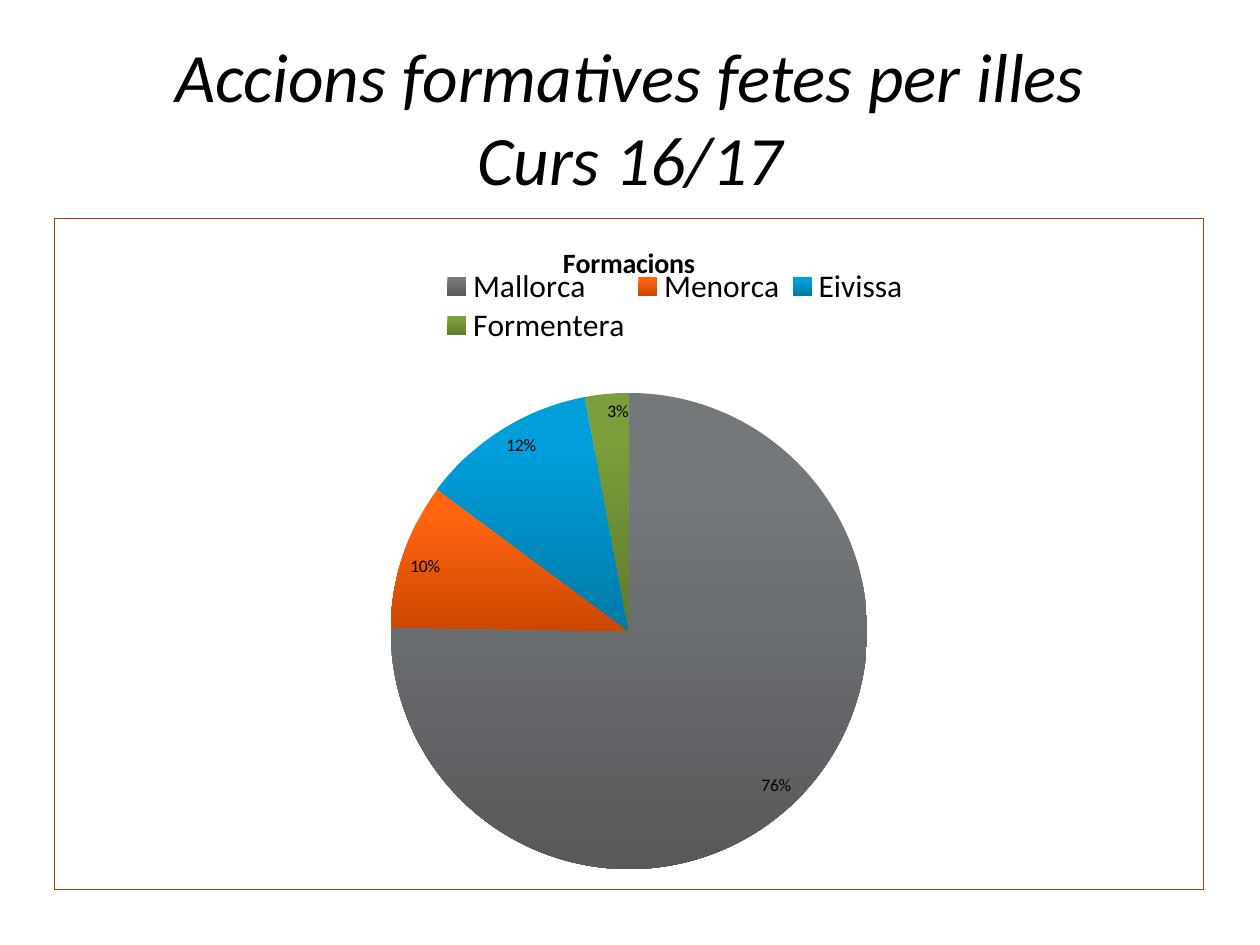
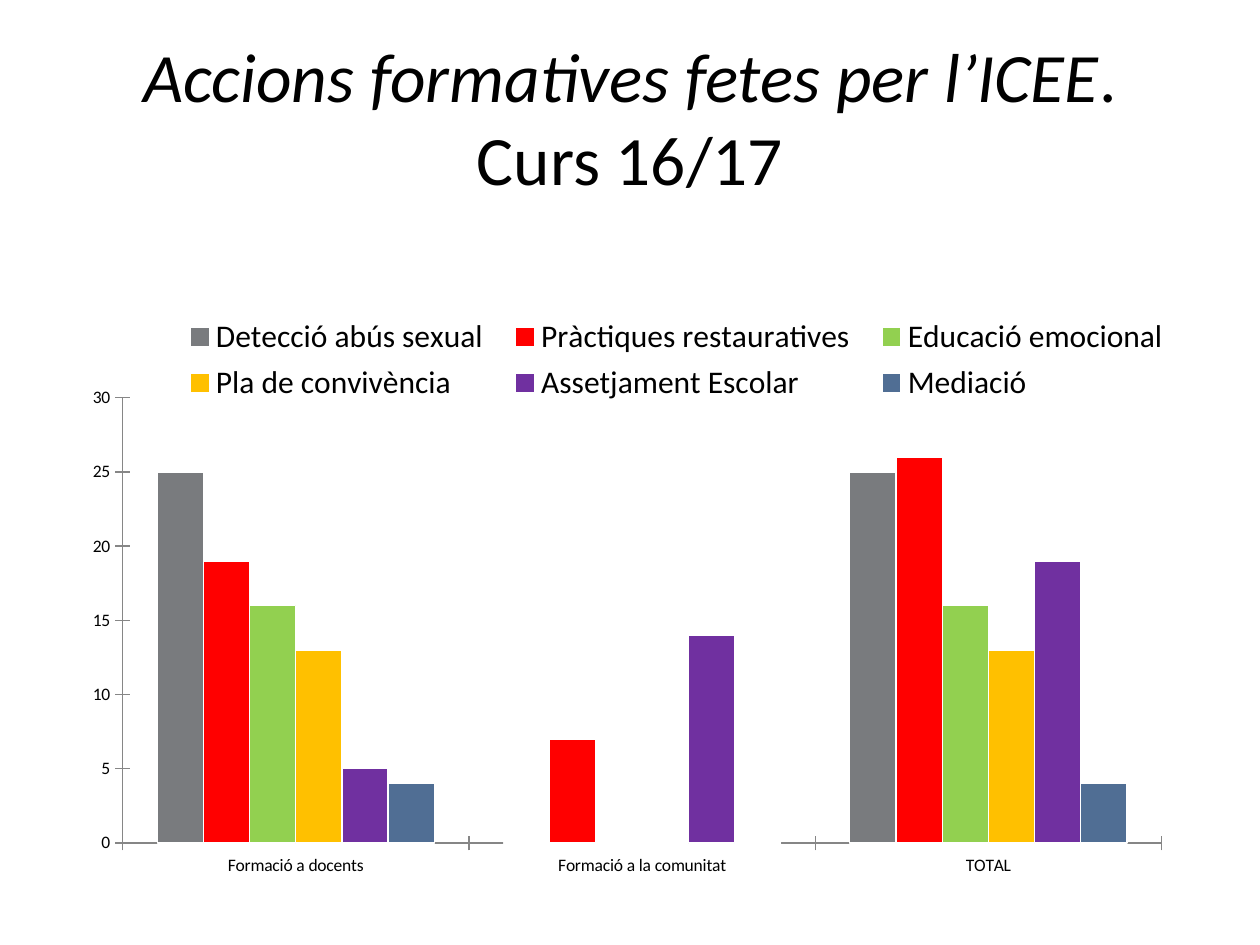
"""Build two slides on training actions: a pie by island and columns by topic."""
from lxml import etree
from pptx import Presentation
from pptx.chart.data import CategoryChartData
from pptx.dml.color import RGBColor
from pptx.enum.chart import XL_CHART_TYPE, XL_LABEL_POSITION, XL_LEGEND_POSITION, XL_TICK_MARK
from pptx.enum.text import MSO_ANCHOR, MSO_AUTO_SIZE, PP_ALIGN
from pptx.oxml import parse_xml
from pptx.oxml.ns import nsdecls, qn
from pptx.util import Pt

PIE, COLUMNS = XL_CHART_TYPE.PIE, XL_CHART_TYPE.COLUMN_CLUSTERED
TOP, RIGHT = XL_LEGEND_POSITION.TOP, XL_LEGEND_POSITION.RIGHT
INSIDE_END, CROSS = XL_LABEL_POSITION.INSIDE_END, XL_TICK_MARK.CROSS
MIDDLE, NO_FIT, CENTER = MSO_ANCHOR.MIDDLE, MSO_AUTO_SIZE.NONE, PP_ALIGN.CENTER

PX = 914400 / 126
FONT = "Calibri"
TITLE_ONLY = 5
TITLE_BOX = (63, 38, 1134, 157)
COLORS = {"text": "000000", "paper": "FFFFFF", "axis": "868686", "border": "984807"}

ISLANDS_TITLE = [
    [("Accions formatives fetes per illes", True)],
    [("Curs 16/17", True)],
]
ISLANDS_NAME = "Formacions"
ISLANDS_BOX = (54, 218, 1150, 672)
ISLANDS_PLOT = (0.29, 0.26, 0.42, 0.71)
ISLANDS_LEGEND = (0.33, 0.07, 0.42, 0.12)
ISLANDS = [
    ("Mallorca", 76, "74787B", "58595B"),
    ("Menorca", 10, "FF640F", "CC4700"),
    ("Eivissa", 12, "009FDC", "007BA8"),
    ("Formentera", 3, "7A9E3A", "5F7A2E"),
]

TOPICS_TITLE = [
    [("Accions formatives fetes per l’ICEE", True), (".", False)],
    [("Curs 16/17", False)],
]
TOPICS_BOX = (54, 304, 1142, 586)
TOPICS_PLOT = (0.06, 0.16, 0.91, 0.76)
TOPICS_LEGEND = (0.1, 0.01, 0.89, 0.17)
AUDIENCES = ["Formació a docents", "Formació a la comunitat", "TOTAL"]
TOPICS = [
    ("Detecció abús sexual", (25, 0, 25), "797B7E"),
    ("Pràctiques restauratives", (19, 7, 26), "FF0000"),
    ("Educació emocional", (16, 0, 16), "92D050"),
    ("Pla de convivència", (13, 0, 13), "FFC000"),
    ("Assetjament Escolar", (5, 14, 19), "7030A0"),
    ("Mediació", (4, 0, 4), "506E94"),
]


def rgb(value):
    """Return a colour from its hex string."""
    return RGBColor.from_string(value)


def scale(box):
    """Turn a box in px into EMU."""
    return [round(n * PX) for n in box]


def style_font(font, size, bold=False, italic=False):
    """Apply the shared typeface and text colour."""
    font.name, font.size = FONT, Pt(size)
    font.bold, font.italic = bold, italic
    font.color.rgb = rgb(COLORS["text"])


def manual_layout(box, inner=False):
    """Return a chart layout element with fractional placement."""
    layout = parse_xml(f"<c:layout {nsdecls('c')}><c:manualLayout/></c:layout>")
    values = [("layoutTarget", "inner")] if inner else []
    values += [("xMode", "edge"), ("yMode", "edge"), *zip("xywh", box)]
    for tag, value in values:
        etree.SubElement(layout[0], qn(f"c:{tag}")).set("val", str(value))
    return layout


def add_slide(prs, lines):
    """Add a slide with its formatted title."""
    slide = prs.slides.add_slide(prs.slide_layouts[TITLE_ONLY])
    sp = slide.shapes.title
    sp.left, sp.top, sp.width, sp.height = scale(TITLE_BOX)
    tf = sp.text_frame
    tf.word_wrap, tf.auto_size, tf.vertical_anchor = True, NO_FIT, MIDDLE
    p = tf.paragraphs[0]
    p.alignment = CENTER
    for i, line in enumerate(lines):
        if i:
            p.add_line_break()
        for text, italic in line:
            r = p.add_run()
            r.text = text
            style_font(r.font, 39.6, italic=italic)
    return slide


def add_chart(slide, kind, box, categories, series, plot_box, legend_pos, legend_box):
    """Add a chart with the shared fonts and a placed plot and legend."""
    data = CategoryChartData()
    data.categories = categories
    for name, values in series:
        data.add_series(name, values)
    chart = slide.shapes.add_chart(kind, *scale(box), data).chart
    style_font(chart.font, 10)
    chart.has_legend = True
    legend = chart.legend
    legend.position, legend.include_in_layout = legend_pos, False
    style_font(legend.font, 18)
    legend._element.find(qn("c:legendPos")).addnext(manual_layout(legend_box))
    area = chart._chartSpace.chart.plotArea
    for old in area.findall(qn("c:layout")):
        area.remove(old)
    area.insert(0, manual_layout(plot_box, inner=True))
    return chart


def add_border(chart):
    """Outline the whole chart area."""
    border = parse_xml(
        f"<c:spPr {nsdecls('c', 'a')}><a:noFill/><a:ln w=\"{Pt(0.75)}\"><a:solidFill>"
        f"<a:srgbClr val=\"{COLORS['border']}\"/></a:solidFill></a:ln></c:spPr>")
    chart._chartSpace.chart.addnext(border)


def build_islands(prs):
    """Build the pie slide."""
    slide = add_slide(prs, ISLANDS_TITLE)
    names, values, tops, bottoms = zip(*ISLANDS)
    chart = add_chart(slide, PIE, ISLANDS_BOX, names, [(ISLANDS_NAME, values)],
                      ISLANDS_PLOT, TOP, ISLANDS_LEGEND)
    add_border(chart)
    tf = chart.chart_title.text_frame
    tf.text = ISLANDS_NAME
    style_font(tf.paragraphs[0].runs[0].font, 16, bold=True)
    plot = chart.plots[0]
    plot.vary_by_categories = True
    for i, shades in enumerate(zip(tops, bottoms)):
        fill = plot.series[0].points[i].format.fill
        fill.gradient()
        fill.gradient_angle = 270
        for stop, shade, position in zip(fill.gradient_stops, shades, (0.2, 1)):
            stop.color.rgb, stop.position = rgb(shade), position
    plot.has_data_labels = True
    labels = plot.data_labels
    labels.show_value, labels.position = True, INSIDE_END
    labels.number_format, labels.number_format_is_linked = '0"%"', False
    style_font(labels.font, 10)


def build_topics(prs):
    """Build the column slide."""
    slide = add_slide(prs, TOPICS_TITLE)
    chart = add_chart(slide, COLUMNS, TOPICS_BOX, AUDIENCES, [t[:2] for t in TOPICS],
                      TOPICS_PLOT, RIGHT, TOPICS_LEGEND)
    chart.has_title = False
    plot = chart.plots[0]
    plot.vary_by_categories, plot.gap_width, plot.overlap = False, 150, 0
    for series, (_, _, color) in zip(plot.series, TOPICS):
        series.format.fill.solid()
        series.format.fill.fore_color.rgb = rgb(color)
        series.format.line.color.rgb = rgb(COLORS["paper"])
        series.format.line.width = Pt(0.75)
    for axis in (chart.category_axis, chart.value_axis):
        axis.has_major_gridlines = False
        axis.major_tick_mark = CROSS
        axis.format.line.color.rgb = rgb(COLORS["axis"])
        style_font(axis.tick_labels.font, 10)
    axis = chart.value_axis
    axis.minimum_scale, axis.maximum_scale, axis.major_unit = 0, 30, 5


def main():
    """Build and save the presentation."""
    prs = Presentation()
    prs.slide_width, prs.slide_height = scale((1260, 945))
    build_islands(prs)
    build_topics(prs)
    prs.save("out.pptx")


if __name__ == "__main__":
    main()
